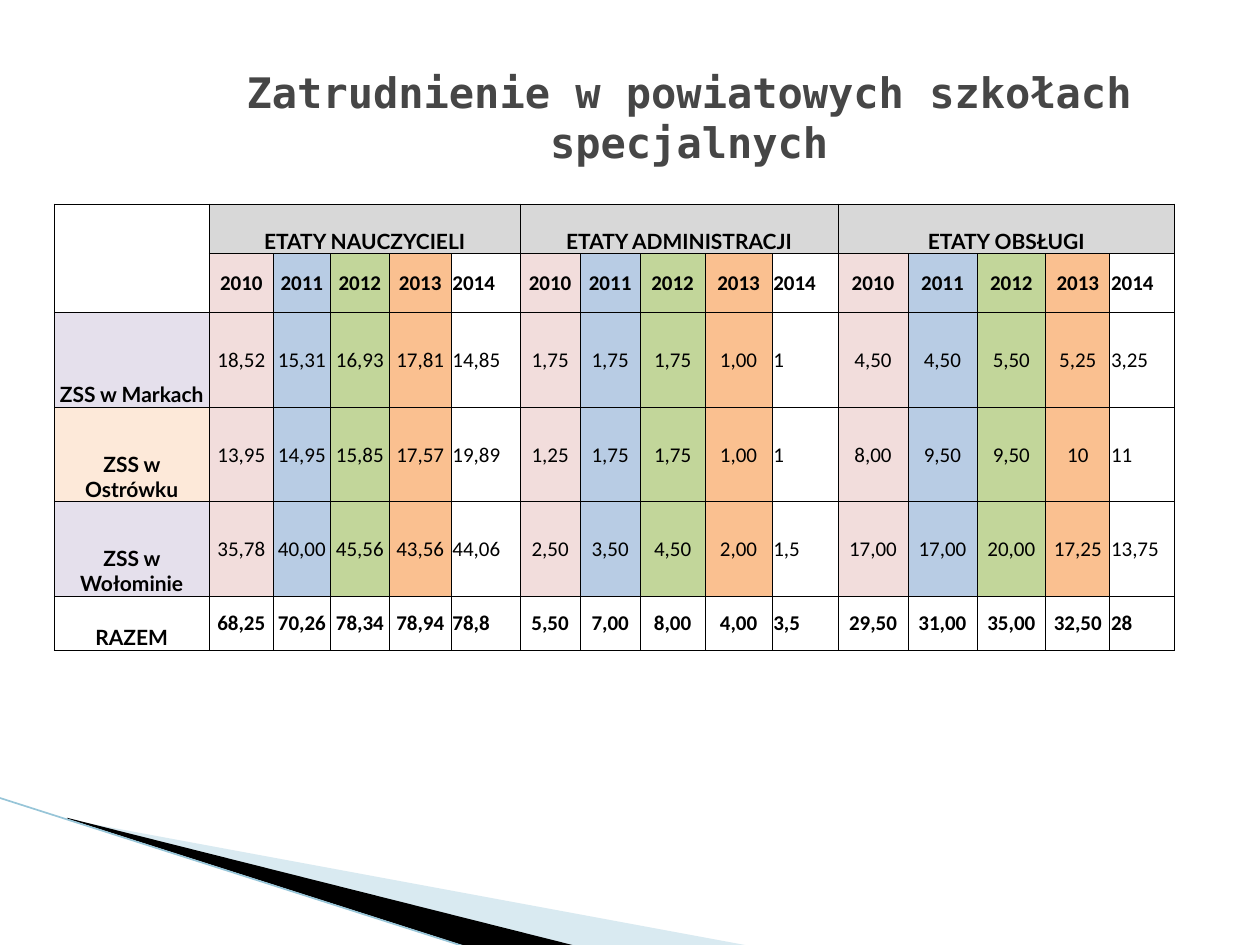
from dataclasses import dataclass
from typing import Optional

from lxml.etree import SubElement
from pptx import Presentation
from pptx.dml.color import RGBColor
from pptx.enum.shapes import MSO_CONNECTOR
from pptx.enum.text import MSO_ANCHOR, PP_ALIGN
from pptx.oxml.ns import qn
from pptx.util import Pt

COLORS = {
    "ink": "000000", "title": "464646", "head": "D8D8D8",
    "lilac": "E5E0EC", "peach": "FDE9D9",
    "rose": "F2DDDC", "blue": "B8CCE4", "green": "C2D69A", "orange": "FAC090",
    "pale": "A0CBDC", "edge": "97C5D8",
}
YEARS = ["2010", "2011", "2012", "2013", "2014"]
TINTS = ["rose", "blue", "green", "orange", None]
GROUPS = ["ETATY NAUCZYCIELI", "ETATY ADMINISTRACJI", "ETATY OBSŁUGI"]
WIDTHS = [88.6, 36.6, 32.6, 33.7, 35.4, 39.4, 34.3, 34.3, 37.1, 38.3, 37.7,
          40, 39.4, 39.4, 36.6, 37.1]
HEIGHTS = [28.4, 33.8, 54, 54, 54, 30.8]


@dataclass
class Wedge:
    points: list
    color: str
    alpha: Optional[int] = None


@dataclass
class School:
    name: str
    tint: Optional[str]
    values: str
    total: bool = False


WEDGES = [
    Wedge([(39.6, 468.5), (428.4, 540.5), (328.3, 540.5), (39.6, 468)], "pale", 40),
    Wedge([(38.2, 467.3), (329, 540.5), (267.8, 541.2), (38.9, 468)], "ink"),
]
SCHOOLS = [
    School("ZSS w Markach", "lilac",
           "18,52 15,31 16,93 17,81 14,85 1,75 1,75 1,75 1,00 1 4,50 4,50 5,50 5,25 3,25"),
    School("ZSS w Ostrówku", "peach",
           "13,95 14,95 15,85 17,57 19,89 1,25 1,75 1,75 1,00 1 8,00 9,50 9,50 10 11"),
    School("ZSS w Wołominie", "lilac",
           "35,78 40,00 45,56 43,56 44,06 2,50 3,50 4,50 2,00 1,5 17,00 17,00 20,00 17,25 13,75"),
    School("RAZEM", None,
           "68,25 70,26 78,34 78,94 78,8 5,50 7,00 8,00 4,00 3,5 29,50 31,00 35,00 32,50 28", True),
]


def rgb(key: str) -> RGBColor:
    return RGBColor.from_string(COLORS[key])


def style(para, color: str, **props) -> None:
    for run in para.runs:
        run.font.color.rgb = rgb(color)
        for name, value in props.items():
            setattr(run.font, name, value)


def draw_wedge(slide, wedge: Wedge) -> None:
    points = [(Pt(x), Pt(y)) for x, y in wedge.points]
    path = slide.shapes.build_freeform(*points[0])
    path.add_line_segments(points[1:], close=True)
    shape = path.convert_to_shape()
    shape.shadow.inherit = False
    shape.line.fill.background()
    shape.fill.solid()
    shape.fill.fore_color.rgb = rgb(wedge.color)
    if wedge.alpha:
        color = shape.fill._xPr.find(".//" + qn("a:srgbClr"))
        SubElement(color, qn("a:alpha"), val=str(wedge.alpha * 1000))


def draw_edge(slide) -> None:
    line = slide.shapes.add_connector(
        MSO_CONNECTOR.STRAIGHT, Pt(-0.7), Pt(455.8), Pt(267.1), Pt(541.4))
    line.line.color.rgb = rgb("edge")
    line.line.width = Pt(0.95)
    SubElement(line._element.spPr, qn("a:effectLst"))


def draw_title(slide, text: str) -> None:
    frame = slide.shapes.add_textbox(Pt(67.7), Pt(21.6), Pt(652.3), Pt(90)).text_frame
    frame.word_wrap = True
    frame.vertical_anchor = MSO_ANCHOR.MIDDLE
    para = frame.paragraphs[0]
    para.text = text
    para.alignment = PP_ALIGN.CENTER
    style(para, "title", name="DejaVu Sans Mono", size=Pt(24), bold=True)


def frame_cell(cell) -> None:
    props = cell._tc.get_or_add_tcPr()
    for side in ("lnL", "lnR", "lnT", "lnB"):
        line = SubElement(props, qn("a:" + side), w=str(Pt(0.5)))
        fill = SubElement(line, qn("a:solidFill"))
        SubElement(fill, qn("a:srgbClr"), val=COLORS["ink"])
    cell.fill.background()
    margins = {"margin_left": 0.7, "margin_right": 0.7, "margin_top": 0.7, "margin_bottom": 0}
    for name, value in margins.items():
        setattr(cell, name, Pt(value))


def fill_cell(cell, text: str, tint: Optional[str], font: str = "Calibri",
              bold: bool = True, anchor=MSO_ANCHOR.MIDDLE, align=PP_ALIGN.CENTER) -> None:
    cell.text = text
    cell.vertical_anchor = anchor
    if tint:
        cell.fill.solid()
        cell.fill.fore_color.rgb = rgb(tint)
    para = cell.text_frame.paragraphs[0]
    para.alignment = align
    style(para, "ink", name=font, size=Pt(12), bold=bold)


def fill_row(table, row: int, values: list, bold: bool, tinted: bool = True) -> None:
    for i, value in enumerate(values):
        year = i % len(YEARS)
        last = year == len(YEARS) - 1
        fill_cell(table.cell(row, i + 1), value, TINTS[year] if tinted else None, bold=bold,
                  align=PP_ALIGN.LEFT if last else PP_ALIGN.CENTER)


def draw_table(slide) -> None:
    table = slide.shapes.add_table(len(HEIGHTS), len(WIDTHS), Pt(31), Pt(116.6),
                                   Pt(sum(WIDTHS)), Pt(sum(HEIGHTS))).table
    table.first_row = table.horz_banding = False
    for col, width in zip(table.columns, WIDTHS):
        col.width = Pt(width)
    for row, height in zip(table.rows, HEIGHTS):
        row.height = Pt(height)
    for cell in table.iter_cells():
        frame_cell(cell)

    # Heading rows
    label = {"font": "Lato", "anchor": MSO_ANCHOR.BOTTOM}
    table.cell(0, 0).merge(table.cell(1, 0))
    for i, name in enumerate(GROUPS):
        col = 1 + i * len(YEARS)
        table.cell(0, col).merge(table.cell(0, col + len(YEARS) - 1))
        fill_cell(table.cell(0, col), name, "head", **label)
    fill_row(table, 1, YEARS * len(GROUPS), bold=True)

    # Schools and total
    for row, school in enumerate(SCHOOLS, 2):
        fill_cell(table.cell(row, 0), school.name, school.tint, **label)
        fill_row(table, row, school.values.split(), school.total, not school.total)


def main() -> None:
    deck = Presentation()
    deck.slide_width, deck.slide_height = Pt(720), Pt(540)
    slide = deck.slides.add_slide(deck.slide_layouts[6])
    # Corner decoration
    for wedge in WEDGES:
        draw_wedge(slide, wedge)
    draw_edge(slide)
    # Content
    draw_title(slide, "Zatrudnienie w powiatowych szkołach specjalnych")
    draw_table(slide)
    deck.save("out.pptx")


if __name__ == "__main__":
    main()
